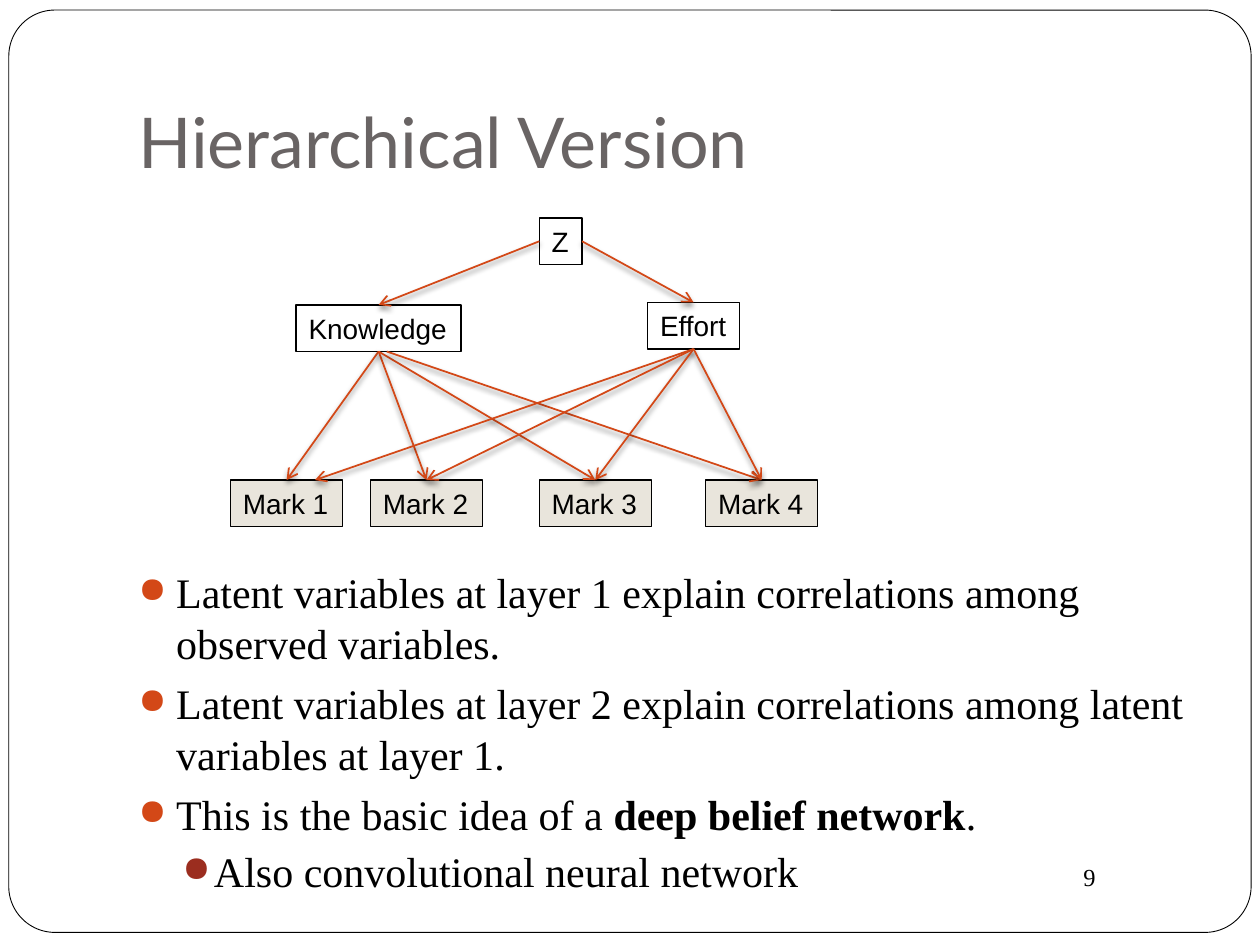
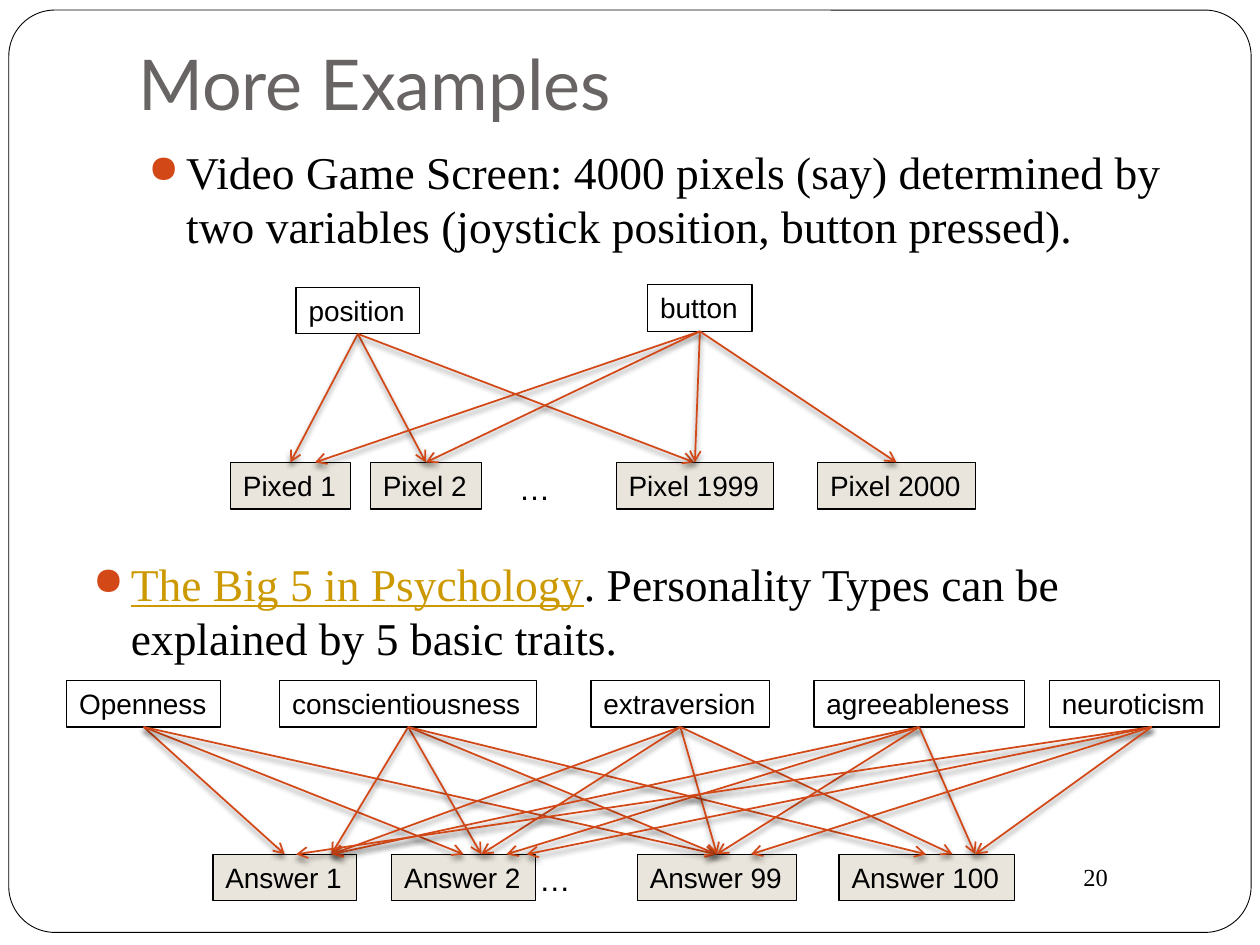
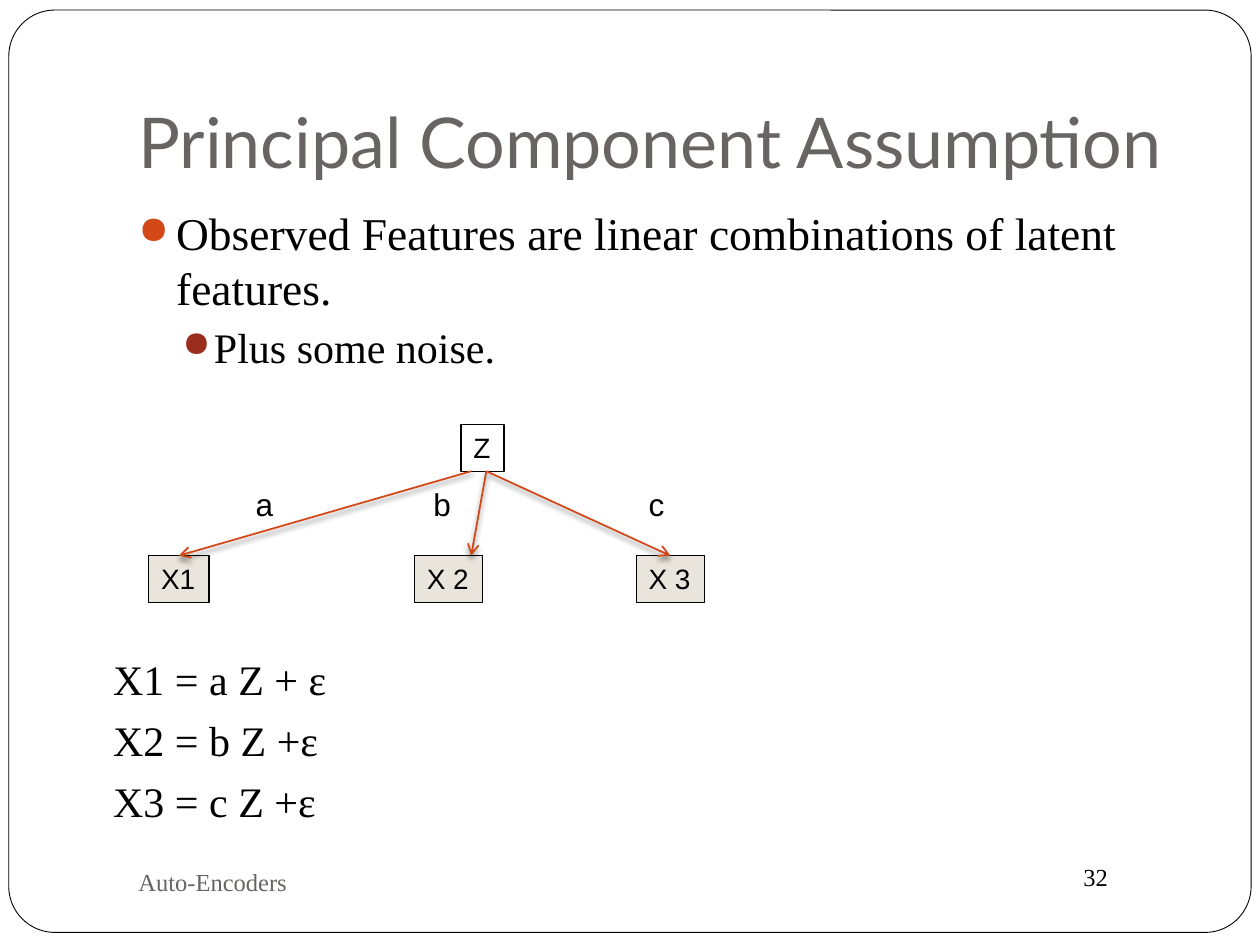
"""Builds three slides on latent variable models as node and arrow diagrams."""
from lxml import etree
from pptx import Presentation
from pptx.dml.color import RGBColor
from pptx.enum.shapes import MSO_CONNECTOR, MSO_SHAPE
from pptx.enum.text import MSO_ANCHOR
from pptx.oxml.ns import qn
from pptx.util import Inches, Pt

BLACK = RGBColor(0x00, 0x00, 0x00)
WHITE = RGBColor(0xFF, 0xFF, 0xFF)
GREY = RGBColor(0x69, 0x64, 0x64)
ORANGE = RGBColor(0xD3, 0x48, 0x17)
BRICK = RGBColor(0x9B, 0x2D, 0x1F)
SAND = RGBColor(0xE9, 0xE5, 0xDC)
GOLD = RGBColor(0xCC, 0x99, 0x00)

RECTANGLE = MSO_SHAPE.RECTANGLE
ROUNDED = MSO_SHAPE.ROUNDED_RECTANGLE
STRAIGHT = MSO_CONNECTOR.STRAIGHT
ANCHOR_TOP = MSO_ANCHOR.TOP
ANCHOR_MIDDLE = MSO_ANCHOR.MIDDLE
ANCHOR_BOTTOM = MSO_ANCHOR.BOTTOM
TOP, LEFT, BOTTOM, RIGHT = range(4)

TITLE_FONT, BODY_FONT, NODE_FONT = "Lato", "Times New Roman", "Arial"
COLUMNS, ROWS = 100, 75
NODE_ROWS = 3.7
BULLET_LEVELS = [(0.3, -0.3, 5.8, ORANGE), (0.6, -0.25, 3.8, BRICK)]


def add_element(parent, tag, **attributes):
    """Append a drawing element with the given attributes."""
    element = etree.SubElement(parent, qn(tag))
    for name, value in attributes.items():
        element.set(name, str(value))
    return element


class Sketch:
    """Holds the deck's style and the current page."""

    def __init__(self):
        """Start an empty deck on a grid of columns and rows."""
        self.deck = Presentation()
        self.deck.slide_width, self.deck.slide_height = Inches(10), Inches(7.5)
        self.page = None

    def columns(self, count):
        """Return the width of a number of grid columns."""
        return round(self.deck.slide_width * count / COLUMNS)

    def rows(self, count):
        """Return the height of a number of grid rows."""
        return round(self.deck.slide_height * count / ROWS)

    def place(self, area):
        """Turn left, top, width and height in cells into lengths."""
        left, top, width, height = area
        return self.columns(left), self.rows(top), self.columns(width), self.rows(height)

    def new_page(self, title, number, title_rows=12.5):
        """Open a page with its frame, number and title."""
        self.page = self.deck.slides.add_slide(self.deck.slide_layouts[6])
        frame = self.shape(ROUNDED, (0.7, 0.8, 98.6, 73.2), WHITE, 0.5)
        frame.adjustments[0] = 0.05
        self.label(str(number), (85, 67.9, 10, 3.4), BODY_FONT, 14)
        heading = self.label(title, (10, 3, 85, title_rows), TITLE_FONT, 40, GREY, ANCHOR_BOTTOM)
        heading.text_frame.margin_bottom = Inches(0.1)

    def shape(self, kind, area, fill, line_width):
        """Draw an outlined shape, filled when a colour is given."""
        shape = self.page.shapes.add_shape(kind, *self.place(area))
        shape.shadow.inherit = False
        if fill is None:
            shape.fill.background()
        else:
            shape.fill.solid()
            shape.fill.fore_color.rgb = fill
        shape.line.color.rgb = BLACK
        shape.line.width = Pt(line_width)
        return shape

    def style(self, span, font, size, color=BLACK):
        """Set the font, size and colour of a span."""
        span.font.name = font
        span.font.size = Pt(size)
        span.font.color.rgb = color

    def text_box(self, area, anchor=ANCHOR_TOP):
        """Add an empty wrapping text box."""
        box = self.page.shapes.add_textbox(*self.place(area))
        box.text_frame.word_wrap = True
        box.text_frame.vertical_anchor = anchor
        return box

    def label(self, text, area, font=NODE_FONT, size=18, color=BLACK, anchor=ANCHOR_TOP):
        """Write one line of text."""
        box = self.text_box(area, anchor)
        box.text_frame.text = text
        self.style(box.text_frame.paragraphs[0].runs[0], font, size, color)
        return box

    def body(self, area, items, bullets=True):
        """Write paragraphs given as level, size and spans."""
        frame = self.text_box(area).text_frame
        for index, (level, size, spans) in enumerate(items):
            para = frame.add_paragraph() if index else frame.paragraphs[0]
            margin, indent, space, color = BULLET_LEVELS[level]
            para.level = level
            para.space_before = Pt(space)
            properties = para._p.get_or_add_pPr()
            properties.set("marL", str(Inches(margin)))
            properties.set("indent", str(Inches(indent)))
            if bullets:
                bullet_color = add_element(properties, "a:buClr")
                add_element(bullet_color, "a:srgbClr", val=color)
                add_element(properties, "a:buSzPct", val=85000)
                add_element(properties, "a:buChar", char="●")
            for text, role in spans:
                span = para.add_run()
                span.text = text
                self.style(span, BODY_FONT, size, GOLD if role == "link" else BLACK)
                span.font.bold = role == "bold"
                span.font.underline = role == "link"

    def nodes(self, top, entries, fill=None):
        """Draw a row of named boxes given as name, left and width."""
        return [self.node(name, left, top, width, fill) for name, left, width in entries]

    def node(self, name, left, top, width, fill=None):
        """Draw one named box."""
        box = self.shape(RECTANGLE, (left, top, width, NODE_ROWS), fill, 0.75)
        frame = box.text_frame
        frame.word_wrap = False
        frame.vertical_anchor = ANCHOR_TOP
        frame.text = name
        para = frame.paragraphs[0]
        para.alignment = 1
        self.style(para.runs[0], NODE_FONT, 16)
        return box

    def arrow(self, source, target, side=BOTTOM, from_column=None, to_column=None):
        """Join two boxes, at a side's middle unless a column is given."""
        begin_x, end_x = self.columns(from_column or 0), self.columns(to_column or 0)
        arrow = self.page.shapes.add_connector(
            STRAIGHT, begin_x, source.top + source.height, end_x, target.top)
        if from_column is None:
            arrow.begin_connect(source, side)
        if to_column is None:
            arrow.end_connect(target, TOP)
        arrow.line.color.rgb = ORANGE
        arrow.line.width = Pt(1)
        add_element(arrow.line._get_or_add_ln(), "a:tailEnd", type="arrow")
        effects = add_element(arrow._element.spPr, "a:effectLst")
        shadow = add_element(effects, "a:outerShdw", blurRad=Pt(3), dist=Pt(2),
                             dir=5400000, rotWithShape=0)
        add_element(add_element(shadow, "a:srgbClr", val=BLACK), "a:alpha", val=50000)

    def fan(self, source, targets, to_columns=None, from_column=None):
        """Draw arrows from one box to many, some ending at given columns."""
        ends = to_columns or [None] * len(targets)
        for target, column in zip(targets, ends):
            self.arrow(source, target, from_column=from_column, to_column=column)


def hierarchy_page(sketch):
    """Show two layers of latent variables above the marks."""
    sketch.new_page("Hierarchical Version", 9)
    sketch.body((10, 44.5, 85, 24), [
        (0, 24, [("Latent variables at layer 1 explain correlations among observed variables.", "")]),
        (0, 24, [("Latent variables at layer 2 explain correlations among latent variables at layer 1.", "")]),
        (0, 24, [("This is the basic idea of a ", ""), ("deep belief network", "bold"), (".", "")]),
        (1, 24, [("Also convolutional neural network", "")]),
    ])
    lefts = [18.3, 29.4, 42.8, 56]
    marks = sketch.nodes(
        38.1, [(f"Mark {n}", left, 8.9) for n, left in enumerate(lefts, 1)], SAND)
    knowledge = sketch.node("Knowledge", 23.5, 24.2, 13.1)
    effort = sketch.node("Effort", 51.4, 24, 7.3)
    root = sketch.node("Z", 42.8, 17.3, 3.4)
    sketch.fan(knowledge, marks[:3])
    sketch.arrow(knowledge, marks[3], from_column=30.7)
    sketch.fan(effort, marks, [25, None, None, None])
    sketch.arrow(root, knowledge, LEFT)
    sketch.arrow(root, effort, RIGHT)


def examples_page(sketch):
    """Show pixels and questionnaire answers with their causes."""
    sketch.new_page("More Examples", 20, 7.9)
    sketch.body((10.8, 10.9, 85, 14.3), [
        (0, 26, [("Video Game Screen: 4000 pixels (say) determined by two variables "
                  "(joystick position, button pressed).", "")]),
    ])
    pixels = sketch.nodes(36.7, [
        ("Pixed 1", 18.3, 9.5), ("Pixel 2", 29.4, 8.8),
        ("Pixel 1999", 48.9, 12.5), ("Pixel 2000", 64.9, 12.5)], SAND)
    position = sketch.node("position", 23.5, 22.8, 9.8)
    button = sketch.node("button", 51.4, 22.6, 8.3)
    sketch.fan(position, pixels[:3], [None, None, 55.1])
    sketch.fan(button, pixels, [25, None, None, None])
    sketch.label("…", (40.2, 36.7, 5.4, 4))

    sketch.body((6.4, 43.6, 85, 10.5), [
        (0, 26, [("The Big 5 in Psychology", "link"),
                 (". Personality Types can be explained by 5 basic traits.", "")]),
    ])
    answers = sketch.nodes(67.8, [
        ("Answer 1", 16.9, 11.4), ("Answer 2", 31.1, 11.4),
        ("Answer 99", 50.6, 12.6), ("Answer 100", 66.6, 13.9)], SAND)
    sketch.label("…", (41.8, 67.8, 5.4, 4))
    openness, conscientiousness, extraversion, agreeableness, neuroticism = sketch.nodes(54, [
        ("Openness", 5.3, 12.2), ("conscientiousness", 22.2, 20.4),
        ("extraversion", 46.9, 14.2), ("agreeableness", 64.6, 16.7),
        ("neuroticism", 83.3, 13.5)])
    sketch.fan(openness, answers[:3], [None, 36.8, None])
    sketch.fan(conscientiousness, answers, [26.3, 38.2, None, 73.5])
    sketch.fan(extraversion, answers, [26.3, 38.2, None, 75.6])
    sketch.fan(agreeableness, answers, [26.3, 40.2, None, 77.4])
    sketch.fan(neuroticism, answers, [23.5, 41.8, 59.6, 77.4], 91.4)


def component_page(sketch):
    """Show observed features as noisy multiples of one latent feature."""
    sketch.new_page("Principal Component Assumption", 32)
    sketch.body((10, 15.8, 85, 16.1), [
        (0, 26, [("Observed Features are linear combinations of latent features.", "")]),
        (1, 24, [("Plus some noise.", "")]),
    ])
    sketch.label("Auto-Encoders", (10, 67.5, 43.3, 5), BODY_FONT, 14, GREY, ANCHOR_MIDDLE)
    first, second, third = sketch.nodes(
        44.1, [("X1", 11.8, 4.8), ("X 2", 32.9, 5.4), ("X 3", 50.5, 5.4)], SAND)
    root = sketch.node("Z", 36.6, 33.7, 3.4)
    sketch.arrow(root, first, from_column=37.4)
    sketch.arrow(root, second, from_column=38.6, to_column=37.4)
    sketch.arrow(root, third, from_column=38.6)
    for weight, left in zip("abc", [19.3, 33.4, 50.5]):
        sketch.label(weight, (left, 38, 3.9, 4))
    equations = ["X1 = a Z + ε", "X2 = b Z +ε", "X3 = c Z +ε"]
    sketch.body((8, 51.4, 85, 16.1), [(0, 24, [(line, "")]) for line in equations], False)


def main():
    """Build and save the deck."""
    sketch = Sketch()
    hierarchy_page(sketch)
    examples_page(sketch)
    component_page(sketch)
    sketch.deck.save("out.pptx")


if __name__ == "__main__":
    main()
